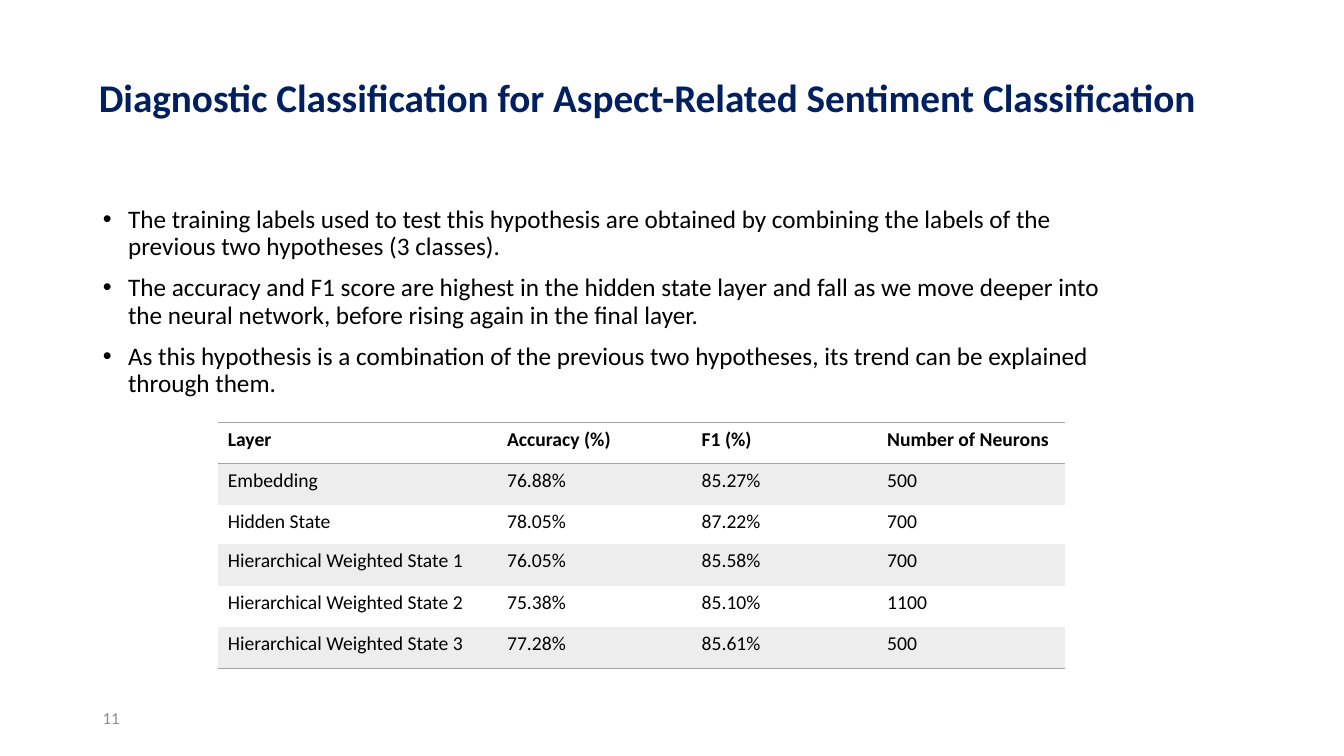
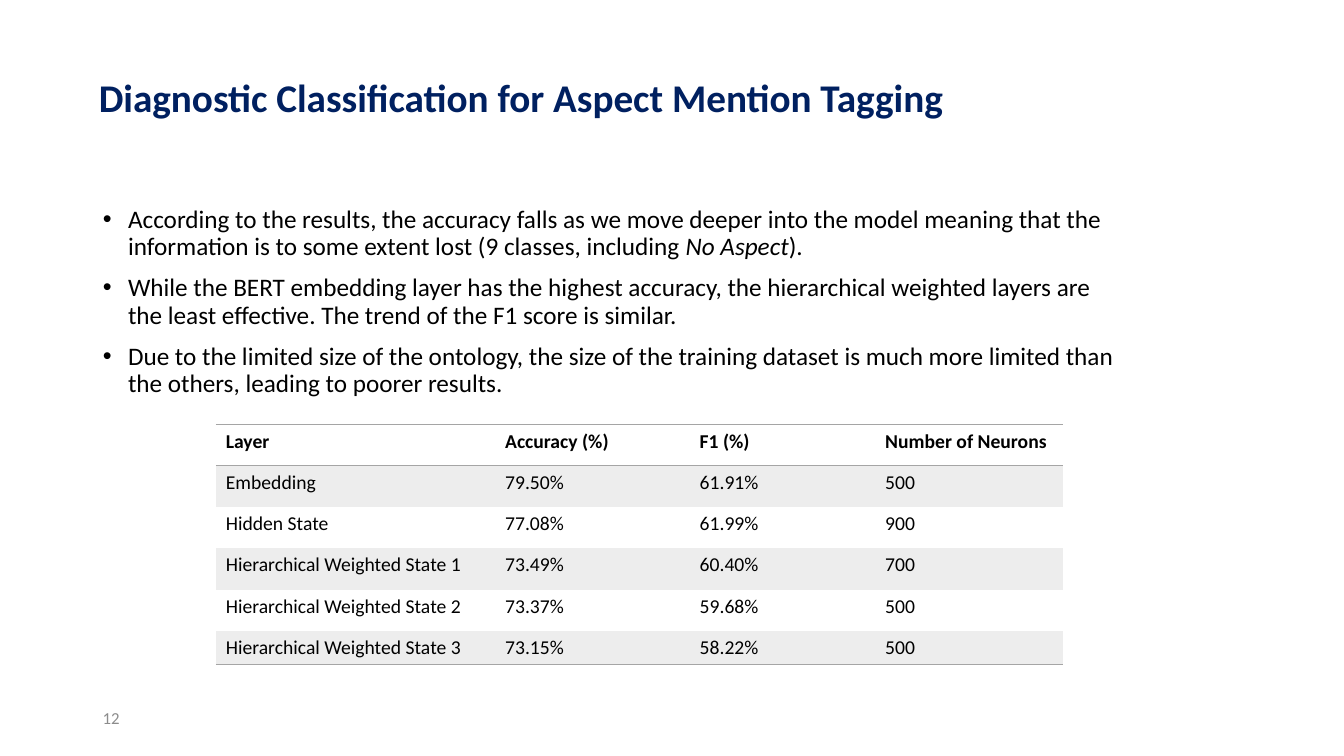
from lxml.etree import SubElement
from pptx import Presentation
from pptx.dml.color import RGBColor
from pptx.enum.text import MSO_ANCHOR as Anchor, MSO_AUTO_SIZE as AutoSize, PP_ALIGN as Align
from pptx.oxml.ns import qn
from pptx.util import Pt

PX = 9144  # EMU, so that 100 px make one inch
NO_TABLE_STYLE = "{2D5ABB26-0587-4C30-8999-92F81FD0307C}"
COLUMN_WIDTHS = (277, 193, 184, 186)
HEADINGS = ("Layer", "Accuracy (%)", "F1 (%)", "Number of Neurons")
LAYERS = ("Embedding", "Hidden State", *(f"Hierarchical Weighted State {n}" for n in (1, 2, 3)))

SLIDES = [
    {
        "number": 11,
        "title": "Diagnostic Classification for Aspect-Related Sentiment Classification",
        "points": [
            "The training labels used to test this hypothesis are obtained by combining the labels "
            "of the previous two hypotheses (3 classes).",
            "The accuracy and F1 score are highest in the hidden state layer and fall as we move "
            "deeper into the neural network, before rising again in the final layer.",
            "As this hypothesis is a combination of the previous two hypotheses, its trend can be "
            "explained through them.",
        ],
        "scores": [
            ("76.88%", "85.27%", "500"),
            ("78.05%", "87.22%", "700"),
            ("76.05%", "85.58%", "700"),
            ("75.38%", "85.10%", "1100"),
            ("77.28%", "85.61%", "500"),
        ],
        "table_at": (216, 419),
        "row_heights": (41, 41, 39, 41, 41, 41),
    },
    {
        "number": 12,
        "title": "Diagnostic Classification for Aspect Mention Tagging",
        "points": [
            "According to the results, the accuracy falls as we move deeper into the model meaning "
            "that the information is to some extent lost (9 classes, including *No Aspect*).",
            "While the BERT embedding layer has the highest accuracy, the hierarchical weighted "
            "layers are the least effective. The trend of the F1 score is similar.",
            "Due to the limited size of the ontology, the size of the training dataset is much more "
            "limited than the others, leading to poorer results.",
        ],
        "scores": [
            ("79.50%", "61.91%", "500"),
            ("77.08%", "61.99%", "900"),
            ("73.49%", "60.40%", "700"),
            ("73.37%", "59.68%", "500"),
            ("73.15%", "58.22%", "500"),
        ],
        "table_at": (214, 421),
        "row_heights": (41, 41, 41, 41, 41, 33),
    },
]


def rgb(color):
    return RGBColor.from_string(color)


def set_all(target, values):
    for name, value in values.items():
        setattr(target, name, value)


class Deck:
    FONT = "Calibri"
    NAVY, BLACK, GREY = "002060", "000000", "8C8C8C"
    RULE, BAND = "A5A5A5", "EDEDED"
    TITLE_PARAGRAPH = {"alignment": Align.LEFT, "line_spacing": 0.9}
    POINT_PARAGRAPH = {"line_spacing": 0.9, "space_before": Pt(10)}

    def __init__(self, width, height):
        self.prs = Presentation()
        set_all(self.prs, {"slide_width": width * PX, "slide_height": height * PX})
        self.slide = None

    def new_slide(self):
        self.slide = self.prs.slides.add_slide(self.prs.slide_layouts[1])

    def place(self, shape, left, top, width, height):
        box = {"left": left, "top": top, "width": width, "height": height}
        set_all(shape, {side: length * PX for side, length in box.items()})

    def frame(self, shape, anchor):
        set_all(shape.text_frame, {"word_wrap": True, "auto_size": AutoSize.NONE,
                                   "vertical_anchor": anchor})
        return shape.text_frame

    def add_text(self, paragraph, text, size, color, bold=False):
        """Add the text to the paragraph; parts between asterisks are italic."""
        for position, part in enumerate(text.split("*")):
            run = paragraph.add_run()
            run.text = part
            set_all(run.font, {"name": self.FONT, "size": Pt(size), "bold": bold,
                               "italic": position % 2 == 1})
            run.font.color.rgb = rgb(color)

    def title(self, text):
        heading = self.slide.shapes.title
        self.place(heading, 88, 57, 1245, 84)
        paragraph = self.frame(heading, Anchor.MIDDLE).paragraphs[0]
        set_all(paragraph, self.TITLE_PARAGRAPH)
        self.add_text(paragraph, text, 28, self.NAVY, bold=True)

    def bullets(self, points):
        body = self.slide.placeholders[1]
        self.place(body, 92, 200, 1028, 476)
        frame = self.frame(body, Anchor.TOP)
        for index, point in enumerate(points):
            paragraph = frame.add_paragraph() if index else frame.paragraphs[0]
            set_all(paragraph, self.POINT_PARAGRAPH)
            indents = paragraph._p.get_or_add_pPr()
            indents.set("marL", str(25 * PX))
            indents.set("indent", str(-25 * PX))
            self.add_text(paragraph, point, 18, self.BLACK)

    def page_number(self, number):
        footer = self.slide.shapes.add_textbox(92 * PX, 695 * PX, 1150 * PX, 35 * PX)
        paragraph = self.frame(footer, Anchor.MIDDLE).paragraphs[0]
        self.add_text(paragraph, str(number), 12, self.GREY)

    def rule(self, cell, edge):
        """Draw a thin line on the "T" (top) or "B" (bottom) edge of a cell."""
        line = SubElement(cell._tc.get_or_add_tcPr(), qn(f"a:ln{edge}"), w=str(Pt(1)))
        fill = SubElement(line, qn("a:solidFill"))
        SubElement(fill, qn("a:srgbClr"), val=self.RULE)

    def table(self, rows, left, top, row_heights):
        """Add a table with ruled header and last row, and every second row shaded."""
        graphic = self.slide.shapes.add_table(
            len(rows), len(COLUMN_WIDTHS), left * PX, top * PX,
            sum(COLUMN_WIDTHS) * PX, sum(row_heights) * PX)
        for style in graphic.element.iter(qn("a:tableStyleId")):
            style.text = NO_TABLE_STYLE
        grid = graphic.table
        for column, width in zip(grid.columns, COLUMN_WIDTHS):
            column.width = width * PX
        edges = {0: "TB", len(rows) - 1: "B"}
        for index, (row, height, values) in enumerate(zip(grid.rows, row_heights, rows)):
            row.height = height * PX
            for cell, value in zip(row.cells, values):
                self.add_text(cell.text_frame.paragraphs[0], value, 14, self.BLACK,
                              bold=index == 0)
                for edge in edges.get(index, ""):
                    self.rule(cell, edge)
                if index % 2:
                    cell.fill.solid()
                    cell.fill.fore_color.rgb = rgb(self.BAND)
                else:
                    cell.fill.background()


def main():
    deck = Deck(1333, 750)
    for content in SLIDES:
        deck.new_slide()
        deck.bullets(content["points"])
        deck.title(content["title"])
        deck.page_number(content["number"])
        results = [(layer, *scores) for layer, scores in zip(LAYERS, content["scores"])]
        deck.table([HEADINGS, *results], *content["table_at"], content["row_heights"])
    deck.prs.save("out.pptx")


if __name__ == "__main__":
    main()
